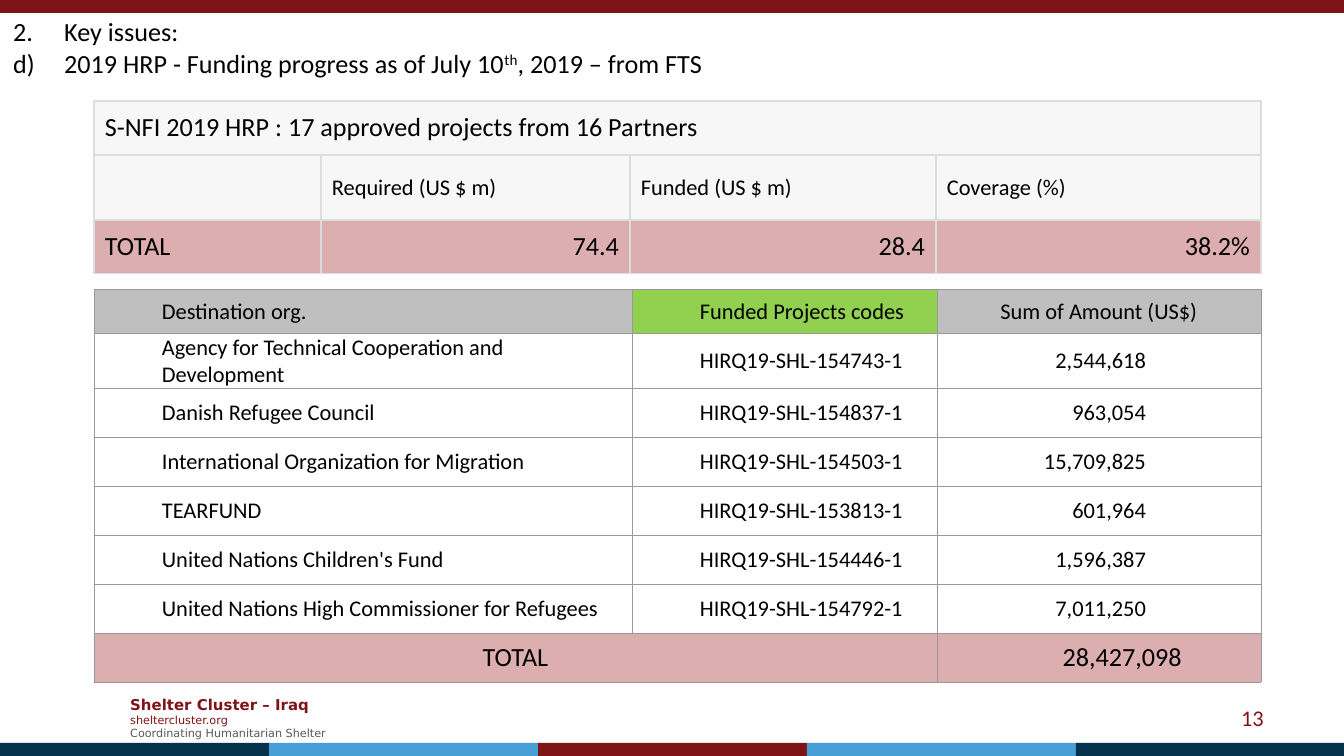
from dataclasses import dataclass

from lxml import etree
from pptx import Presentation
from pptx import util as u
from pptx.dml import color
from pptx.enum import shapes, text
from pptx.oxml import ns

SCALE = 9144000 / 1344  # EMU in one px
LEFT, MID, RIGHT = text.PP_ALIGN.LEFT, text.PP_ALIGN.CENTER, text.PP_ALIGN.RIGHT


@dataclass(frozen=True)
class Theme:
    sans: str = "Calibri"
    foot: str = "DejaVu Sans"
    black: str = "000000"
    grey: str = "595959"
    red: str = "7F1416"
    navy: str = "04314C"
    blue: str = "459FD5"
    pale: str = "F7F7F7"
    pink: str = "DCAEAF"
    head: str = "BFBFBF"
    green: str = "92D050"
    large: int = 14
    base: int = 12
    small: int = 8
    tiny: int = 6


@dataclass(frozen=True)
class Cell:
    words: str = ""
    fill: str = ""
    size: int = 12
    align: text.PP_ALIGN = LEFT
    indent: int = 0
    right: int = 0
    span: int = 1


@dataclass(frozen=True)
class Grid:
    top: int
    cols: list[int]
    rows: list[int]
    cells: list[list[Cell]]
    pad: tuple[int, int, int, int]  # left, top, right, bottom
    line: str
    width: float


T = Theme()


def px(n: float) -> int:
    return round(n * SCALE)


def rgb(code: str) -> color.RGBColor:
    return color.RGBColor.from_string(code)


def style(para, size: int, tint: str = T.black, face: str = T.sans, bold: bool = False) -> None:
    font = para.font
    font.size, font.name, font.bold = u.Pt(size), face, bold
    font.color.rgb = rgb(tint)


def bar(slide, x: int, y: int, w: int, h: int, fill: str) -> None:
    rect = slide.shapes.add_shape(shapes.MSO_SHAPE.RECTANGLE, px(x), px(y), px(w), px(h))
    rect.shadow.inherit = False
    rect.fill.solid()
    rect.fill.fore_color.rgb = rgb(fill)
    rect.line.fill.background()


def box(slide, x: int, y: int, w: int, h: int, lines: list[str]):
    frame = slide.shapes.add_textbox(px(x), px(y), px(w), px(h)).text_frame
    frame.word_wrap = True
    frame.vertical_anchor = text.MSO_ANCHOR.MIDDLE
    frame.text = "\n".join(lines)
    return frame.paragraphs


def number(para, kind: str, start: int, indent: int) -> None:
    props = para._p.get_or_add_pPr()
    props.set("marL", str(px(indent)))
    props.set("indent", str(-px(indent)))
    etree.SubElement(props, ns.qn("a:buAutoNum"), type=kind, startAt=str(start))


def border(cell, tint: str, width: float) -> None:
    props = cell._tc.get_or_add_tcPr()
    for i, side in enumerate(("lnL", "lnR", "lnT", "lnB")):
        line = etree.Element(ns.qn(f"a:{side}"), w=str(u.Pt(width)))
        fill = etree.SubElement(line, ns.qn("a:solidFill"))
        etree.SubElement(fill, ns.qn("a:srgbClr"), val=tint)
        props.insert(i, line)


def fill_cell(cell, item: Cell, pad: tuple[int, int, int, int]) -> None:
    cell.margin_left, cell.margin_top, cell.margin_right, cell.margin_bottom = map(px, pad)
    if item.right:
        cell.margin_right = px(item.right)
    cell.vertical_anchor = text.MSO_ANCHOR.MIDDLE
    para = cell.text_frame.paragraphs[0]
    para.text = item.words
    para.alignment = item.align
    if item.indent:
        para._p.get_or_add_pPr().set("marL", str(px(item.indent)))
    style(para, item.size)
    if item.fill:
        cell.fill.solid()
        cell.fill.fore_color.rgb = rgb(item.fill)
    else:
        cell.fill.background()


def draw_grid(slide, grid: Grid) -> None:
    table = slide.shapes.add_table(len(grid.rows), len(grid.cols), px(94), px(grid.top),
                                   px(sum(grid.cols)), px(sum(grid.rows))).table
    table.first_row = table.horz_banding = False
    for col, w in zip(table.columns, grid.cols):
        col.width = px(w)
    for row, h in zip(table.rows, grid.rows):
        row.height = px(h)
    for r, items in enumerate(grid.cells):
        c = 0
        for item in items:
            cell = table.cell(r, c)
            fill_cell(cell, item, grid.pad)
            if item.span > 1:
                cell.merge(table.cell(r, c + item.span - 1))
            c += item.span
    for cell in table.iter_cells():
        border(cell, grid.line, grid.width)


def main() -> None:
    deck = Presentation()
    deck.slide_width, deck.slide_height = px(1344), px(756)
    slide = deck.slides.add_slide(deck.slide_layouts[6])

    # Footer text and colour bars
    foot = box(slide, 117, 688, 233, 59, ["Shelter Cluster – Iraq", "sheltercluster.org",
                                          "Coordinating Humanitarian Shelter"])
    style(foot[0], T.small, T.red, T.foot, True)
    style(foot[1], T.tiny, T.red, T.foot)
    style(foot[2], T.tiny, T.grey, T.foot)
    bar(slide, 0, 0, 1344, 13, T.red)
    for i, tint in enumerate((T.navy, T.blue, T.red, T.blue, T.navy)):
        bar(slide, i * 269, 743, 270 if i < 4 else 268, 13, tint)

    # Page number
    page = box(slide, 964, 698, 313, 40, ["13"])[0]
    page.alignment = RIGHT
    style(page, T.base, T.red)

    # Numbered heading
    head = box(slide, 0, 20, 1344, 54, ["Key issues:", ""])
    number(head[0], "arabicPeriod", 2, 51)
    number(head[1], "alphaLcParenR", 4, 51)
    for words, lift in (("2019 HRP - Funding progress as of July 10", 0), ("th", 30000),
                        (", 2019 – from FTS", 0)):
        run = head[1].add_run()
        run.text = words
        if lift:
            run._r.get_or_add_rPr().set("baseline", str(lift))
    for para in head:
        style(para, T.large)

    # Funding summary
    names = ["", "Required (US $ m)", "Funded (US $ m)", "Coverage (%)"]
    sums = ["74.4", "28.4", "38.2%"]
    draw_grid(slide, Grid(101, [227, 309, 306, 325], [54, 65, 53], [
        [Cell("S-NFI 2019 HRP : 17 approved projects from 16 Partners", T.pale, T.large, span=4)],
        [Cell(name, T.pale) for name in names],
        [Cell("TOTAL", T.pink, T.large)] + [Cell(n, T.pink, T.large, RIGHT) for n in sums],
    ], (11, 11, 11, 11), "DDDDDD", 0.75))

    # Funded projects
    funds = [
        ("Agency for Technical Cooperation and Development", "154743", "2,544,618"),
        ("Danish Refugee Council", "154837", "963,054"),
        ("International Organization for Migration", "154503", "15,709,825"),
        ("TEARFUND", "153813", "601,964"),
        ("United Nations Children's Fund", "154446", "1,596,387"),
        ("United Nations High Commissioner for Refugees", "154792", "7,011,250"),
    ]
    body = [[Cell(org, indent=67), Cell(f"HIRQ19-SHL-{code}-1", indent=67),
             Cell(cash, align=RIGHT, right=115)] for org, code, cash in funds]
    draw_grid(slide, Grid(289, [538, 305, 324], [44, 55] + [49] * 6, [
        [Cell("Destination org.", T.head, indent=67),
         Cell("Funded Projects codes", T.green, indent=67),
         Cell("Sum of Amount (US$)", T.head, align=MID)],
        *body,
        [Cell("TOTAL", T.pink, T.large, MID, span=2),
         Cell("28,427,098", T.pink, T.large, RIGHT, right=79)],
    ], (1, 1, 1, 0), "999999", 0.5))

    deck.save("out.pptx")


if __name__ == "__main__":
    main()
